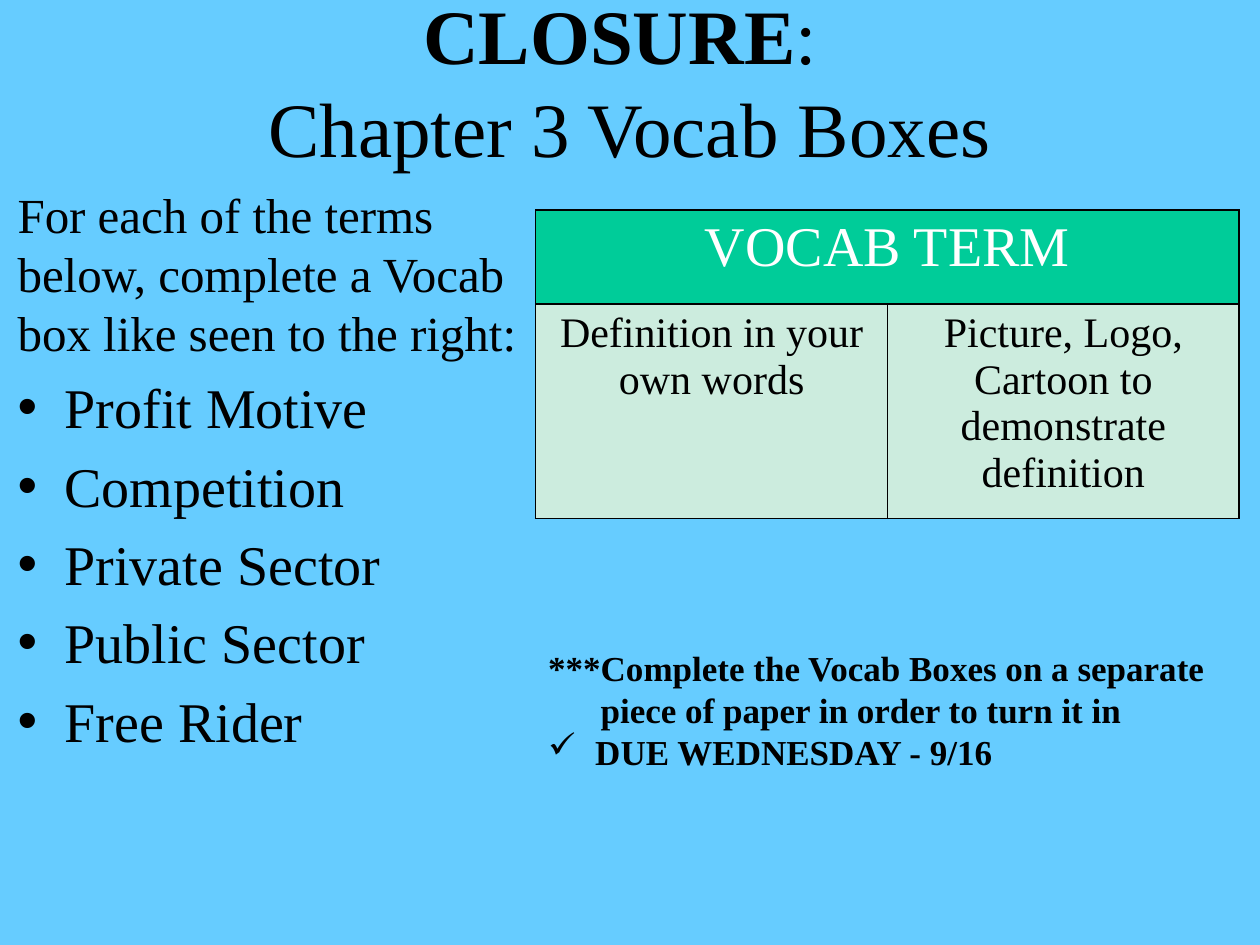
from lxml import etree
from pptx import Presentation
from pptx.dml.color import RGBColor
from pptx.enum import text as t
from pptx.oxml import ns
from pptx.util import Cm, Pt

# Content
HEADING = [("CLOSURE", True), (": \vChapter 3 Vocab Boxes", False)]
INTRO = "For each of the terms below, complete a Vocab box like seen to the right:"
TERMS = ["Profit Motive", "Competition", "Private Sector", "Public Sector", "Free Rider"]
BOX_TERM = "VOCAB TERM"
BOX_PARTS = ["Definition in your own words",
             "Picture, Logo, Cartoon to demonstrate definition"]
# text, left indent in cm, bullet
NOTES = [("***Complete the Vocab Boxes on a separate", 0, None),
         ("piece of paper in order to turn it in", 1.06, None),
         ("DUE WEDNESDAY - 9/16", 0.95, "✓")]

# Places in cm: left, top, width, height
HEADING_AT = (1.9, 0.03, 21.6, 3.18)
TERMS_AT = (0.1, 3.6, 10.6, 11.43)
BOX_AT = (10.8, 4.23, 14.18, 6.22)
NOTES_AT = (10.8, 12.9, 14.18, 2.82)
BOX_ROWS = (1.9, 4.32)
HANGING = 0.95
FONT = "Times New Roman"


def color(hex_code):
    return RGBColor.from_string(hex_code)


def place(part, at):
    for side, length in zip(("left", "top", "width", "height"), at):
        setattr(part, side, Cm(length))


def set_frame(frame, **values):
    for name, value in values.items():
        setattr(frame, name, value)


def add_text(paragraph, wording, size, hex_code="000000", bold=False):
    for i, line in enumerate(wording.split("\v")):
        if i:
            paragraph.add_line_break()
        run = paragraph.add_run()
        run.text = line
        for name, value in dict(name=FONT, size=Pt(size), bold=bold).items():
            setattr(run.font, name, value)
        run.font.color.rgb = color(hex_code)


def set_indent(paragraph, left, bullet=None):
    props = paragraph._p.get_or_add_pPr()
    props.set("marL", str(Cm(left)))
    props.set("indent", str(-Cm(left) if bullet else 0))
    if bullet:
        etree.SubElement(props, ns.qn("a:buChar")).set("char", bullet)
    else:
        etree.SubElement(props, ns.qn("a:buNone"))


def set_cell(cell, wording, size, text_color, fill_color):
    cell.fill.solid()
    cell.fill.fore_color.rgb = color(fill_color)
    paragraph = cell.text_frame.paragraphs[0]
    paragraph.alignment = t.PP_ALIGN.CENTER
    add_text(paragraph, wording, size, text_color)


def set_borders(cell):
    props = cell._tc.get_or_add_tcPr()
    for i, side in enumerate(("lnL", "lnR", "lnT", "lnB")):
        line = etree.Element(ns.qn(f"a:{side}"), w=str(Pt(1)))
        fill = etree.SubElement(line, ns.qn("a:solidFill"))
        etree.SubElement(fill, ns.qn("a:srgbClr"), val="000000")
        props.insert(i, line)


# Slide
deck = Presentation()
deck.slide_width, deck.slide_height = Cm(25.4), Cm(19.05)
slide = deck.slides.add_slide(deck.slide_layouts[1])
slide.background.fill.solid()
slide.background.fill.fore_color.rgb = color("66CCFF")

# Heading
heading = slide.shapes.title
place(heading, HEADING_AT)
set_frame(heading.text_frame, auto_size=t.MSO_AUTO_SIZE.NONE,
          vertical_anchor=t.MSO_ANCHOR.MIDDLE)
for wording, bold in HEADING:
    add_text(heading.text_frame.paragraphs[0], wording, 44, bold=bold)

# Terms list
terms = slide.placeholders[1]
place(terms, TERMS_AT)
set_frame(terms.text_frame, auto_size=t.MSO_AUTO_SIZE.NONE)
intro = terms.text_frame.paragraphs[0]
set_indent(intro, 0)
add_text(intro, INTRO, 28)
for term in TERMS:
    entry = terms.text_frame.add_paragraph()
    set_indent(entry, HANGING, "•")
    add_text(entry, term, 32)

# Vocab box
box = slide.shapes.add_table(2, 2, *map(Cm, BOX_AT)).table
for row, height in zip(box.rows, BOX_ROWS):
    row.height = Cm(height)
box.cell(0, 0).merge(box.cell(0, 1))
set_cell(box.cell(0, 0), BOX_TERM, 32, "FFFFFF", "00CC99")
for column, wording in enumerate(BOX_PARTS):
    set_cell(box.cell(1, column), wording, 24, "000000", "CCECDE")
for cell in box.iter_cells():
    set_borders(cell)

# Notes
notes = slide.shapes.add_textbox(*map(Cm, NOTES_AT)).text_frame
set_frame(notes, word_wrap=True, auto_size=t.MSO_AUTO_SIZE.SHAPE_TO_FIT_TEXT)
for i, (wording, left, bullet) in enumerate(NOTES):
    note = notes.add_paragraph() if i else notes.paragraphs[0]
    set_indent(note, left, bullet)
    add_text(note, wording, 20, bold=True)

deck.save("out.pptx")
